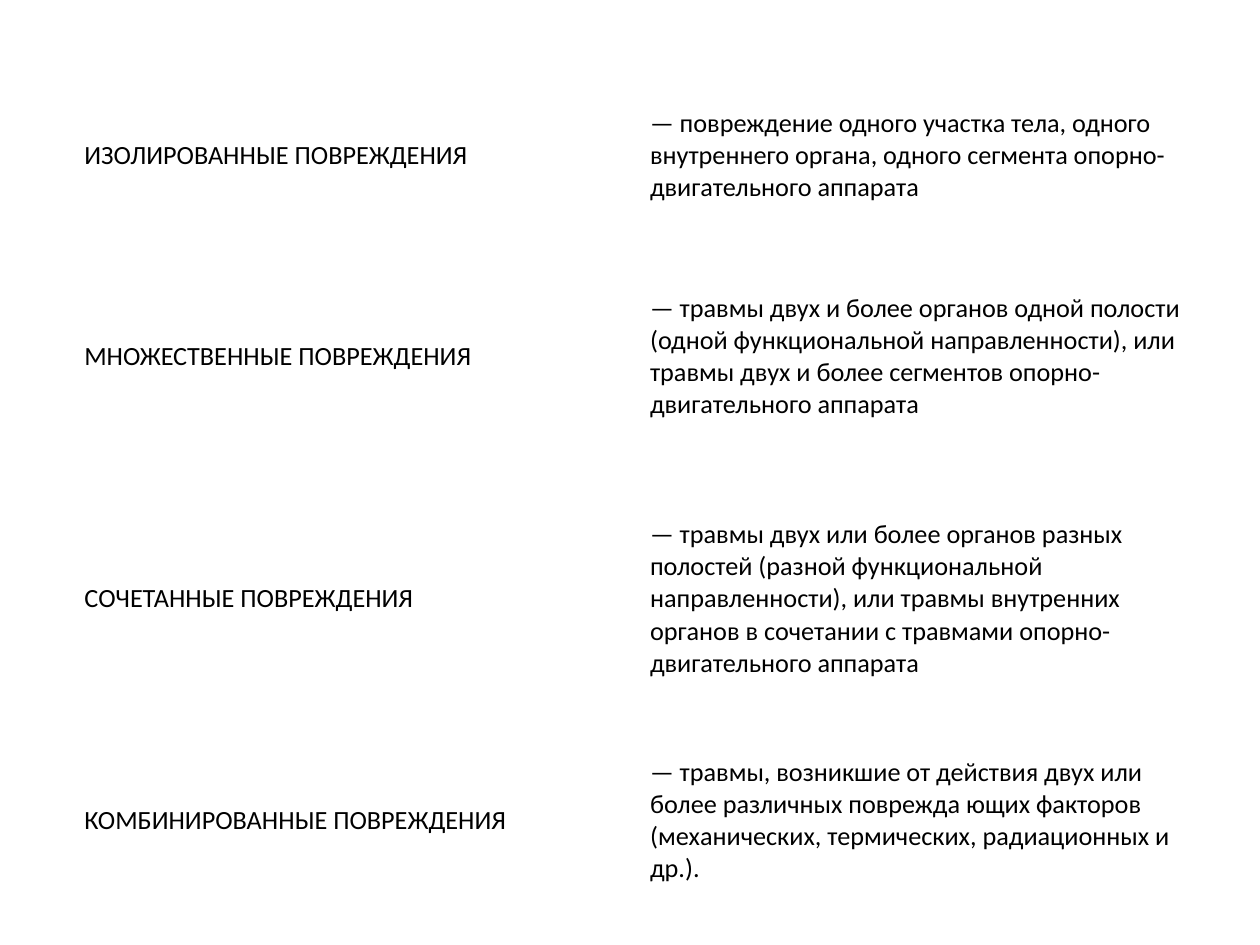
from pptx import Presentation
from pptx.dml.color import RGBColor
from pptx.enum.text import MSO_ANCHOR
from pptx.util import Pt

MIDDLE = MSO_ANCHOR.MIDDLE
COLORS = {"text": "000000"}
FONT = "Calibri"

# Row height, term, meaning
INJURIES = [
    (103, "ИЗОЛИРОВАННЫЕ ПОВРЕЖДЕНИЯ",
     "— повреждение одного участка тела, одного внутреннего органа, "
     "одного сегмента опорно-двигательного аппарата"),
    (126.7, "МНОЖЕСТВЕННЫЕ ПОВРЕЖДЕНИЯ",
     "— травмы двух и более органов одной полости (одной функциональной "
     "направленности), или травмы двух и более сегментов "
     "опорно-двигательного аппарата"),
    (150.5, "СОЧЕТАННЫЕ ПОВРЕЖДЕНИЯ",
     "— травмы двух или более органов разных полостей (разной "
     "функциональной направленности), или травмы внутренних органов "
     "в сочетании с травмами опорно-двигательного аппарата"),
    (103, "КОМБИНИРОВАННЫЕ ПОВРЕЖДЕНИЯ",
     "— травмы, возникшие от действия двух или более различных "
     "поврежда ющих факторов (механических, термических, "
     "радиационных и др.)."),
]


def write(frame, text, size=15, color="text"):
    run = frame.paragraphs[0].add_run()
    run.text = text
    run.font.name = FONT
    run.font.size = Pt(size)
    run.font.bold = False
    run.font.color.rgb = RGBColor.from_string(COLORS[color])


def fill_cell(cell, text):
    cell.fill.background()
    cell.vertical_anchor = MIDDLE
    cell.margin_left = cell.margin_right = Pt(5.7)
    cell.margin_top = cell.margin_bottom = Pt(2.9)
    write(cell.text_frame, text)


def add_terms(slide, left, top, width, rows):
    height = sum(row[0] for row in rows)
    table = slide.shapes.add_table(
        len(rows), 2, Pt(left), Pt(top), Pt(width), Pt(height)).table
    table.first_row = False
    table.horz_banding = False
    for col in table.columns:
        col.width = Pt(width / 2)
    for i, (tall, *texts) in enumerate(rows):
        table.rows[i].height = Pt(tall)
        for j, text in enumerate(texts):
            fill_cell(table.cell(i, j), text)


def main():
    deck = Presentation()
    deck.slide_width, deck.slide_height = Pt(720), Pt(540)
    slide = deck.slides.add_slide(deck.slide_layouts[6])
    add_terms(slide, 42.5, 37.4, 646.6, INJURIES)
    deck.save("out.pptx")


if __name__ == "__main__":
    main()
